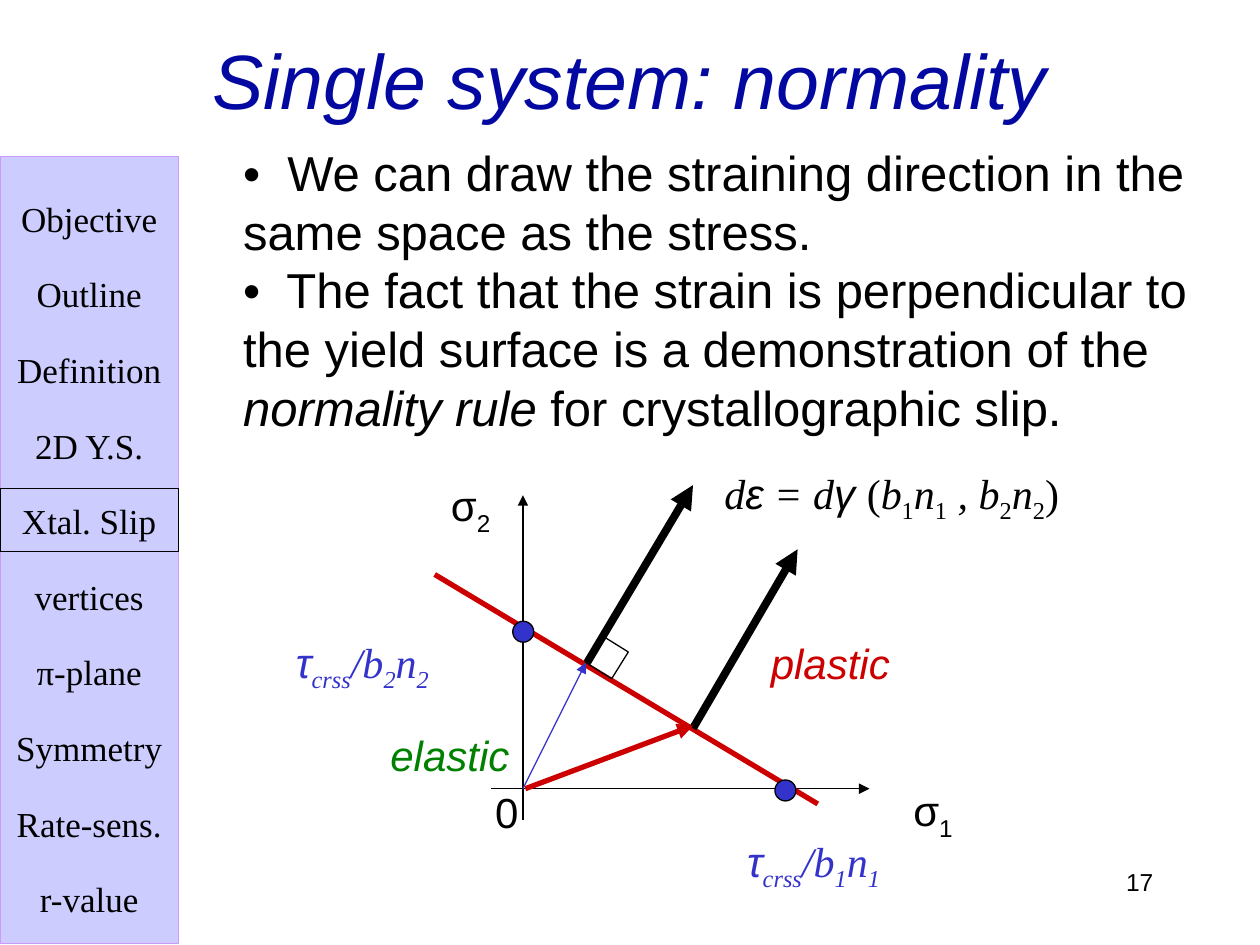
"""Build the slide on normality of a single slip system."""
import pptx
import pptx.dml.color
import pptx.enum.shapes
import pptx.enum.text
import pptx.oxml
import pptx.oxml.ns
import pptx.util

Pt = pptx.util.Pt
RGBColor = pptx.dml.color.RGBColor
SHAPE = pptx.enum.shapes.MSO_SHAPE
ALIGN = pptx.enum.text.PP_ALIGN
ANCHOR = pptx.enum.text.MSO_ANCHOR

BLACK = RGBColor(0x00, 0x00, 0x00)
NAVY = RGBColor(0x03, 0x08, 0xA1)
BLUE = RGBColor(0x33, 0x33, 0xCC)
RED = RGBColor(0xCC, 0x00, 0x00)
GREEN = RGBColor(0x00, 0x80, 0x00)
LAVENDER = RGBColor(0xCC, 0xCC, 0xFF)
VIOLET = RGBColor(0xCC, 0x99, 0xFF)

MENU = ["Objective", "Outline", "Definition", "2D Y.S.", "Xtal. Slip",
        "vertices", "π-plane", "Symmetry", "Rate-sens.", "r-value"]
MENU_WIDTH = 102

# Run flags: t = Times New Roman, i = italic, s = subscript
BODY = [
    [("•  We can draw the straining direction in the same space as the stress.", "")],
    [("•  The fact that the strain is perpendicular to the yield surface is a "
      "demonstration of the ", ""),
     ("normality rule ", "i"), ("for crystallographic slip.", "")],
]


def intercept(index):
    return [("τ", "i"), ("crss", "tis"), ("/b", "ti"), (index, "tis"),
            ("n", "ti"), (index, "tis")]


STRAIN = [("d", "ti"), ("ε", "i"), (" = d", "ti"), ("γ ", "i"), ("(", "t"),
          ("b", "ti"), ("1", "ts"), ("n", "ti"), ("1", "ts"), (" , b", "ti"),
          ("2", "ts"), ("n", "ti"), ("2", "ts"), (")", "t")]

LABELS = [
    ([("0", "")], 275.8, 445.7, 32, BLACK),
    ([("σ", ""), ("1", "s")], 514.8, 445, 42, BLACK),
    ([("σ", ""), ("2", "s")], 250.6, 270.7, 42, BLACK),
    (intercept("1"), 419.8, 473.8, 122.4, BLUE),
    (intercept("2"), 162, 360, 122.4, BLUE),
    ([("elastic", "i")], 216, 413.3, 90, GREEN),
    ([("plastic", "i")], 433.4, 360.7, 90, RED),
    (STRAIN, 406.8, 263.5, 216.7, BLACK),
]

ORIGIN = (298.8, 450.7)
AXES = [((ORIGIN[0], 468.7), (ORIGIN[0], 283), BLACK, 0.75, True),
        ((280.8, ORIGIN[1]), (496.8, ORIGIN[1]), BLACK, 0.75, True)]
YIELD_LINE = ((467.3, 459.4), (248.4, 328.3), RED, 3, False)
FIRST_STRAIN = ((335.5, 378.7), (396, 277.2), BLACK, 4.5, True)
VECTORS = [(ORIGIN, (334.8, 378.7), BLUE, 0.75, True),
           ((396, 416.2), (455.8, 313.9), BLACK, 4.5, True),
           ((300.2, ORIGIN[1]), (396, 414.7), RED, 3, True)]
INTERCEPTS = [(293, 355), (442.8, 445.7)]
DOT = 12


def add_text(slide, paragraphs, box, size, color=BLACK, align=ALIGN.LEFT,
             spacing=None, anchor=ANCHOR.TOP):
    frame = slide.shapes.add_textbox(*map(Pt, box)).text_frame
    frame.word_wrap = True
    frame.vertical_anchor = anchor
    for number, runs in enumerate(paragraphs):
        paragraph = frame.add_paragraph() if number else frame.paragraphs[0]
        paragraph.alignment = align
        paragraph.line_spacing = spacing
        for text, flags in runs:
            run = paragraph.add_run()
            run.text = text
            run.font.name = "Times New Roman" if "t" in flags else "Arial"
            run.font.size = Pt(size)
            run.font.italic = "i" in flags
            run.font.color.rgb = color
            if "s" in flags:
                run.font._element.set("baseline", "-25000")


def add_shape(slide, kind, box, line=BLACK, fill=None, rotation=0):
    shape = slide.shapes.add_shape(kind, *map(Pt, box))
    shape.shadow.inherit = False
    shape.rotation = rotation
    shape.line.color.rgb = line
    shape.line.width = Pt(0.75)
    if fill is None:
        shape.fill.background()
    else:
        shape.fill.solid()
        shape.fill.fore_color.rgb = fill


def add_line(slide, start, end, color, width, arrow):
    connector = slide.shapes.add_connector(
        pptx.enum.shapes.MSO_CONNECTOR.STRAIGHT, *map(Pt, start + end))
    connector.line.color.rgb = color
    connector.line.width = Pt(width)
    if arrow:
        head = pptx.oxml.parse_xml(
            f'<a:tailEnd {pptx.oxml.ns.nsdecls("a")} type="triangle"/>')
        connector.line._get_or_add_ln().append(head)
    connector._element.spPr.append(
        pptx.oxml.parse_xml(f'<a:effectLst {pptx.oxml.ns.nsdecls("a")}/>'))


def main():
    presentation = pptx.Presentation()
    presentation.slide_width, presentation.slide_height = Pt(720), Pt(540)
    slide = presentation.slides.add_slide(presentation.slide_layouts[6])

    add_shape(slide, SHAPE.RECTANGLE, (0, 89.3, MENU_WIDTH, 450), VIOLET, LAVENDER)
    add_text(slide, [[(entry, "t")] for entry in MENU], (0, 90, MENU_WIDTH, 440),
             20, align=ALIGN.CENTER, spacing=1.8)
    add_shape(slide, SHAPE.RECTANGLE, (0, 279.3, MENU_WIDTH, 36))

    add_text(slide, [[("17", "")]], (516.2, 491.8, 150, 36), 14, align=ALIGN.RIGHT)
    add_text(slide, [[("Single system: normality", "i")]], (54, 0, 612, 90), 44,
             NAVY, ALIGN.CENTER, anchor=ANCHOR.MIDDLE)
    add_text(slide, BODY, (131.8, 77.8, 558, 175.7), 28)

    for line in AXES:
        add_line(slide, *line)
    for runs, left, top, width, color in LABELS:
        add_text(slide, [runs], (left, top, width, 36), 24, color)
    add_line(slide, *YIELD_LINE)
    add_line(slide, *FIRST_STRAIN)
    add_shape(slide, SHAPE.RECTANGLE, (337.7, 366.5, 18, 18), rotation=31.9)
    for line in VECTORS:
        add_line(slide, *line)
    for left, top in INTERCEPTS:
        add_shape(slide, SHAPE.OVAL, (left, top, DOT, DOT), fill=BLUE)

    presentation.save("out.pptx")


if __name__ == "__main__":
    main()
